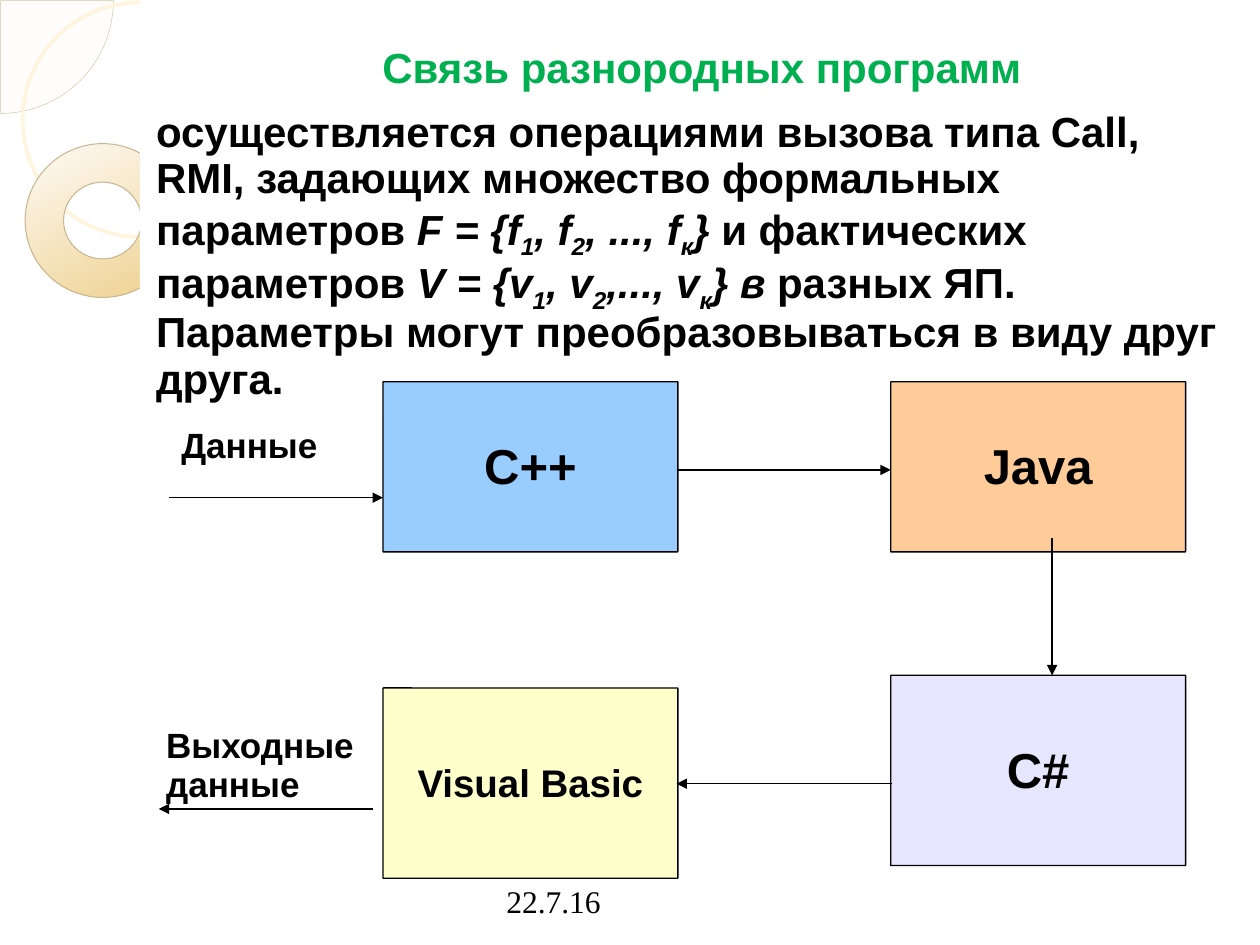
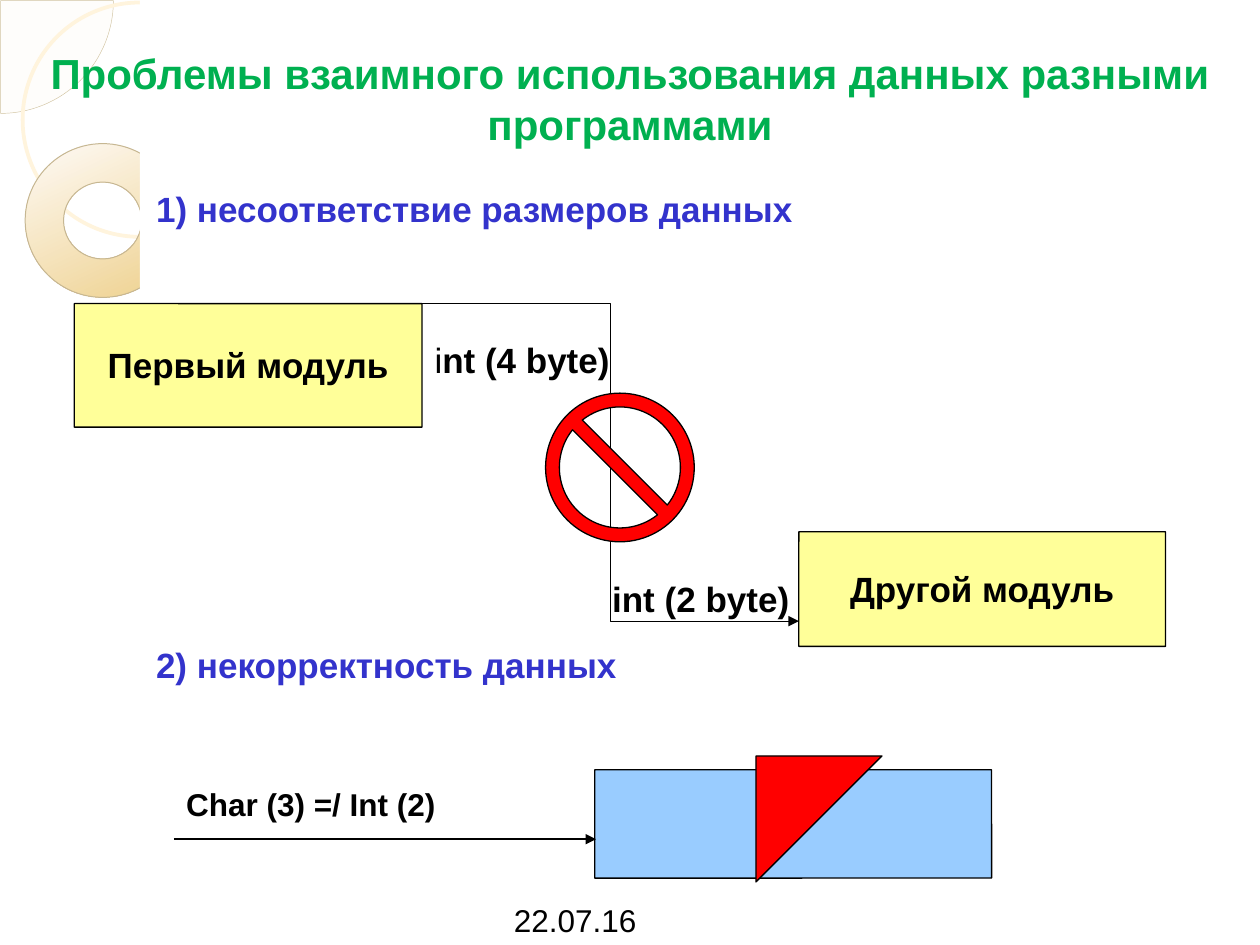
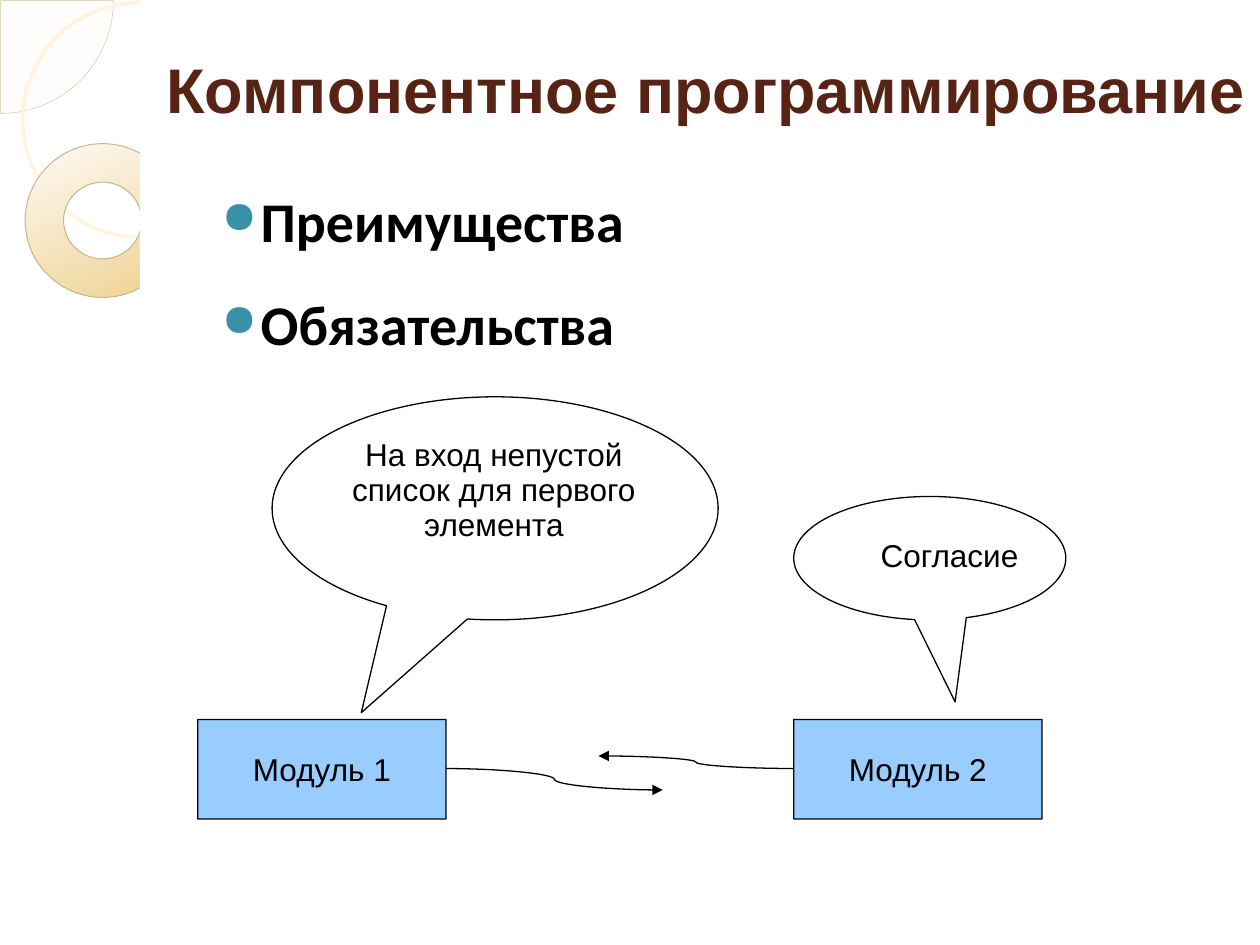
from pptx import Presentation
from pptx.dml.color import RGBColor
from pptx.enum.shapes import MSO_CONNECTOR as CX, MSO_SHAPE as SHAPE
from pptx.enum.text import MSO_ANCHOR as ANCHOR, MSO_AUTO_SIZE as AUTO, PP_ALIGN as ALIGN
from pptx.oxml.ns import qn
from pptx.util import Inches, Pt
from lxml.etree import SubElement

COLORS = {k: RGBColor.from_string(v) for k, v in {
    "black": "000000", "white": "FFFFFF", "green": "00B050", "brown": "572314",
    "indigo": "3333CC", "red": "FF0000", "blue": "99CCFF", "orange": "FFCC99",
    "lilac": "E6E6FF", "cream": "FFFFCC", "yellow": "FFFF99", "teal": "3891A7",
    "petal": "FEFDFB", "petal_line": "D1C3A0", "hoop": "FFF4DD",
    "ring_light": "FEFAF6", "ring_dark": "EED18E", "ring_line": "C6B792",
}.items()}


def draw(s, kind, at, fill=None, line="black", weight=0.75, adj=()):
    sh = s.shapes.add_shape(kind, *map(Inches, at))
    sh.shadow.inherit = False
    for fmt, color in ((sh.fill, fill), (sh.line.fill, line)):
        if color:
            fmt.solid()
            fmt.fore_color.rgb = COLORS[color]
        else:
            fmt.background()
    sh.line.width = Pt(weight)
    for i, value in enumerate(adj):
        sh.adjustments[i] = value
    return sh


def write(sh, paras, size, color="black", bold=True, font="Arial", align=ALIGN.LEFT,
          anchor=ANCHOR.TOP, spacing=0.93, top=0.07):
    tf = sh.text_frame
    frame = {"word_wrap": True, "auto_size": AUTO.NONE, "vertical_anchor": anchor,
             "margin_left": Inches(0.1), "margin_right": Inches(0.1),
             "margin_top": Inches(top), "margin_bottom": Inches(0.05)}
    for key, value in frame.items():
        setattr(tf, key, value)
    for i, runs in enumerate(paras):
        p = tf.add_paragraph() if i else tf.paragraphs[0]
        p.alignment, p.line_spacing = align, spacing
        for text, style in [(runs, {})] if isinstance(runs, str) else runs:
            r = p.add_run()
            r.text = text
            for key, value in {"size": Pt(size), "bold": bold, "name": font, **style}.items():
                setattr(r.font, key, value)
            r.font.color.rgb = COLORS[color]
    return tf


prs = Presentation()
prs.slide_width, prs.slide_height = Inches(10), Inches(7.5)
calls, problems, components = slides = [
    prs.slides.add_slide(prs.slide_layouts[5]) for _ in range(3)]

petal = draw(calls, SHAPE.PIE, (-0.89, -0.89, 1.79, 1.79), "petal", "petal_line", 0.25, (0, 54))
hoop = draw(calls, SHAPE.OVAL, (0.18, 0.02, 1.86, 1.86), None, "hoop", 2.15)
ring = draw(calls, SHAPE.DONUT, (0.2, 1.14, 1.23, 1.22), "white", "ring_line", 0.57, (0.25,))
ring.fill.gradient()
ring.fill.gradient_angle = 295
for stop, color in zip(ring.fill.gradient_stops, ("ring_light", "ring_dark")):
    stop.color.rgb = COLORS[color]
page = draw(calls, SHAPE.RECTANGLE, (1.11, 0, 8.89, 7.5), "white", None)
for i, sh in enumerate((petal, hoop, ring, page)):
    prs.slide_master.shapes.element.insert(2 + i, sh.element)

titles = [
    ("Связь разнородных программ", (1.14, 0.28, 8.86, 0.45), 24, "green", ALIGN.CENTER, 0.05),
    ("Проблемы взаимного использования данных разными программами",
     (0, 0.28, 10, 1.26), 24, "green", ALIGN.CENTER, 0.1),
    ("Компонентное программирование", (1.22, 0.3, 8.78, 1.25), 36, "brown", ALIGN.LEFT, 0.1),
]
for s, (text, at, size, color, align, top) in zip(slides, titles):
    sh = s.shapes.title
    sh.left, sh.top, sh.width, sh.height = map(Inches, at)
    write(sh, [text], size, color, align=align, spacing=1, top=top)
components.shapes.title.text_frame.margin_right = 0

boxes = [
    (calls, "C++", (3.04, 3.03, 2.34, 1.35), "blue", 28),
    (calls, "Java", (7.07, 3.03, 2.34, 1.35), "orange", 28),
    (calls, "C#", (7.07, 5.36, 2.34, 1.51), "lilac", 28),
    (calls, "Visual Basic", (3.04, 5.46, 2.34, 1.51), "cream", 22),
    (problems, "Первый модуль", (0.59, 2.41, 2.76, 0.98), "yellow", 20),
    (problems, "Другой модуль", (6.34, 4.22, 2.91, 0.91), "yellow", 20),
    (problems, "", (4.72, 6.11, 3.15, 0.86), "blue", 18),
    (components, "Модуль 1", (1.57, 5.71, 1.97, 0.79), "blue", 18),
    (components, "Модуль 2", (6.3, 5.71, 1.97, 0.79), "blue", 18),
]
for s, text, at, fill, size in boxes:
    sh = draw(s, SHAPE.ROUNDED_RECTANGLE, at, fill, adj=(0.002,))
    if text:
        write(sh, [text], size, bold=s is not components, align=ALIGN.CENTER,
              anchor=ANCHOR.MIDDLE)

for at, adj in (((2.16, 3.15, 3.54, 1.77), (-0.3, 0.916)),
                ((6.3, 3.94, 2.16, 0.98), (0.093, 1.164))):
    draw(components, SHAPE.OVAL_CALLOUT, at, "white", adj=adj)

arrows = [
    (calls, CX.STRAIGHT, (1.34, 3.95, 3.04, 3.95)),
    (calls, CX.STRAIGHT, (5.37, 3.73, 7.07, 3.73)),
    (calls, CX.STRAIGHT, (8.35, 4.27, 8.35, 5.36)),
    (calls, CX.STRAIGHT, (7.08, 6.22, 5.37, 6.22)),
    (calls, CX.STRAIGHT, (2.96, 6.42, 1.26, 6.42)),
    (problems, CX.ELBOW, (3.35, 2.41, 6.34, 4.93)),
    (problems, CX.STRAIGHT, (1.38, 6.66, 4.73, 6.66)),
    (components, CX.CURVE, (3.54, 6.1, 5.26, 6.27)),
    (components, CX.CURVE, (6.3, 6.1, 4.75, 6)),
]
for s, kind, ends in arrows:
    cx = s.shapes.add_connector(kind, *map(Inches, ends))
    cx.line.color.rgb = COLORS["black"]
    cx.line.width = Pt(0.75)
    SubElement(cx.line._get_or_add_ln(), qn("a:tailEnd"), type="triangle")
    SubElement(cx.element.spPr, qn("a:effectLst"))

italic = {"italic": True}
formula = [
    ("осуществляется операциями вызова типа Call, RMI, задающих множество формальных параметров ", {}),
    ("F = {f", italic), ("1", italic), (", f", italic), ("2", italic),
    (", ..., f", italic), ("к", italic), ("}", italic),
    (" и фактических параметров ", {}),
    ("V = {v", italic), ("1", italic), (", v", italic), ("2", italic),
    (",..., v", italic), ("к", italic), ("} в", italic),
    (" разных ЯП. Параметры могут преобразовываться в виду друг друга.", {}),
]
plain, centered = {"bold": False}, {"bold": False, "align": ALIGN.CENTER}
heading = {"color": "indigo"}
labels = [
    (calls, [formula], (1.14, 0.82, 8.7, 2.38), 24, {"top": 0.05}),
    (calls, ["Данные"], (1.34, 3.32, 1.49, 0.52), 20, {}),
    (calls, ["Выходные", "данные"], (1.22, 5.7, 1.77, 0.87), 20, {}),
    (calls, ["22.7.16"], (3.92, 6.9, 2.33, 0.52), 18,
     {"bold": False, "font": "Times New Roman", "spacing": 1, "top": 0.1}),
    (problems, ["1) несоответствие размеров данных"], (1.14, 1.39, 5.51, 0.87), 20,
     {**heading, "spacing": 1, "top": 0.1}),
    (problems, ["2) некорректность данных"], (1.14, 5.09, 3.94, 0.41), 20,
     {**heading, "top": 0.05}),
    (problems, [[("i", plain), ("nt (4 byte)", {})]], (3.35, 2.65, 2.05, 0.63), 20, {}),
    (problems, ["іnt (2 byte)"], (4.76, 4.54, 1.65, 0.45), 20, {}),
    (problems, ["Char (3) =/ Int (2)"], (1.38, 6.19, 2.36, 0.39), 18, {}),
    (problems, ["22.07.16"], (3.98, 7.11, 1.42, 0.39), 18, plain),
    (components, ["На вход непустой список для первого элемента"],
     (2.64, 3.41, 2.56, 1.28), 18, centered),
    (components, ["Согласие"], (6.89, 4.21, 1.38, 0.38), 18, plain),
    (components, ["Преимущества", "Обязательства"], (1.57, 1.38, 3.94, 1.57), 32,
     {"font": "Calibri", "spacing": 1, "top": 0.1}),
]
frames = [write(s.shapes.add_textbox(*map(Inches, at)), paras, size, **style)
          for s, paras, at, size, style in labels]

for r in frames[0].paragraphs[0].runs:
    if r.text in ("1", "2", "к"):
        r._r.get_or_add_rPr().set("baseline", "-25000")

for p in frames[-1].paragraphs:
    p.space_before, p.space_after = Pt(6), Pt(14.2)
    pPr = p._p.get_or_add_pPr()
    pPr.set("marL", str(Inches(0.4)))
    pPr.set("indent", str(Inches(-0.31)))
    SubElement(SubElement(pPr, qn("a:buClr")), qn("a:srgbClr"), val=str(COLORS["teal"]))
    SubElement(pPr, qn("a:buSzPct"), val="80000")
    SubElement(pPr, qn("a:buChar"), char="●")

draw(problems, SHAPE.NO_SYMBOL, (4.33, 3.12, 1.18, 1.18), "red", adj=(0.093,))
bolt_points = [(6.73, 6.11), (6.19, 6.23), (6.56, 5.66), (6.38, 5.64), (5.94, 6.46), (6.46, 6.34),
               (6.09, 6.94), (6.03, 6.69), (5.91, 7.37), (6.33, 7.18), (6.18, 7.07)]
outline = problems.shapes.build_freeform(*bolt_points[0], scale=Inches(1))
outline.add_line_segments(bolt_points[1:], close=True)
bolt = outline.convert_to_shape()
bolt.shadow.inherit = False
bolt.fill.solid()
bolt.fill.fore_color.rgb = COLORS["red"]
bolt.line.color.rgb = COLORS["black"]
bolt.line.width = Pt(0.75)

prs.save("out.pptx")
